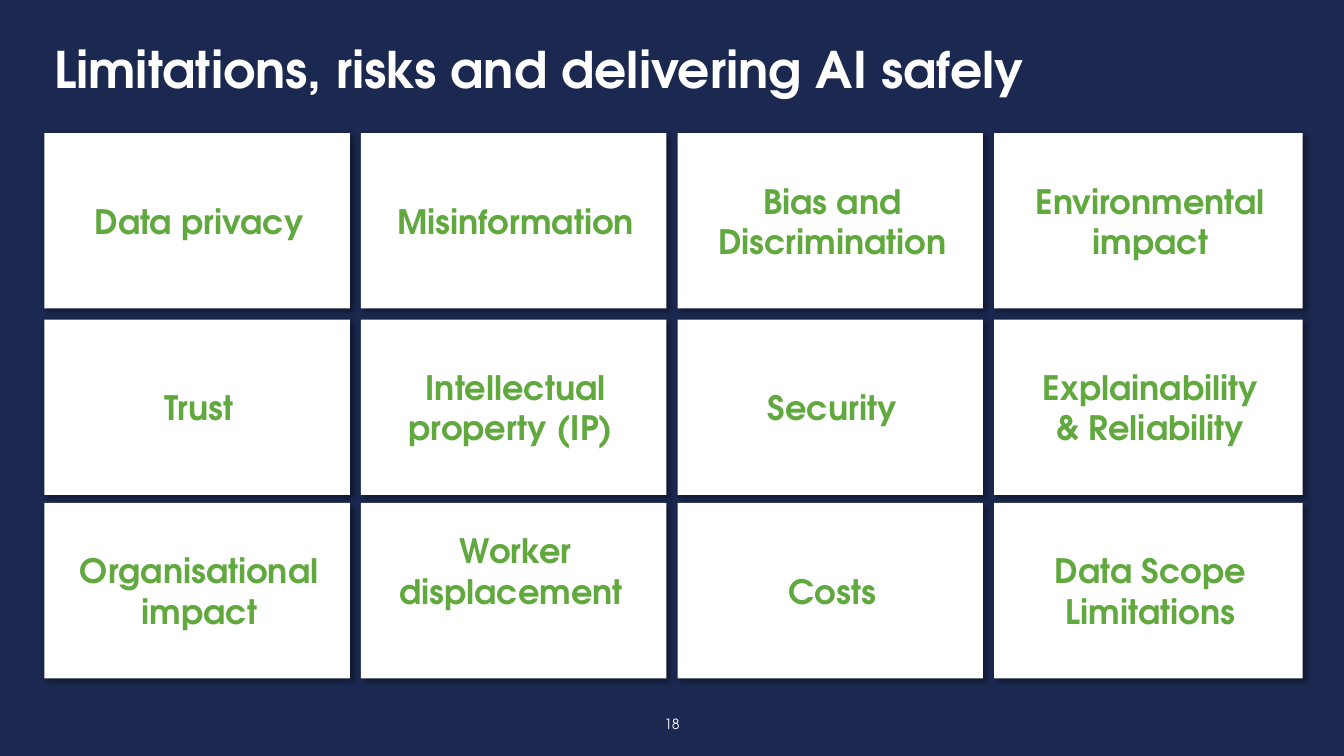
from lxml import etree
from pptx import Presentation
from pptx.dml.color import RGBColor
from pptx.enum.shapes import MSO_SHAPE as Preset
from pptx.enum.text import MSO_ANCHOR as Anchor, PP_ALIGN as Align
from pptx.oxml import parse_xml
from pptx.oxml.ns import nsdecls, qn
from pptx.util import Inches, Pt

NAVY, GREEN, WHITE = "1B284F", "61A83F", "FFFFFF"
LINE_HEIGHT = 0.4

RISKS = [
    ["Data privacy", "Misinformation", "Bias and Discrimination", "Environmental impact"],
    ["Trust", "Intellectual property (IP) ", "Security", "Explainability\n& Reliability"],
    ["Organisational impact", "Worker displacement ", "Costs", "Data Scope Limitations"],
]
COLUMNS = [(0.44, 3.03), (3.58, 3.03), (6.72, 3.03), (9.86, 3.06)]
ROW_TOPS = [1.32, 3.17, 4.99]
CARD_HEIGHT = 1.74
RAISED_CARD = "Worker displacement "


def color(hex_text):
    return RGBColor.from_string(hex_text)


def write(shape, text, *, size, ink, bold=False, align=Align.LEFT, anchor=Anchor.TOP,
          insets=(0.1, 0.05, 0.1, 0.05), spacing=None, font="TeX Gyre Adventor"):
    """Fill a shape with text; each line becomes a paragraph."""
    frame = shape.text_frame
    frame.word_wrap = True
    frame.vertical_anchor = anchor
    (frame.margin_left, frame.margin_top,
     frame.margin_right, frame.margin_bottom) = map(Inches, insets)
    frame.text = text
    for paragraph in frame.paragraphs:
        paragraph.alignment = align
        if spacing:
            paragraph.line_spacing = spacing
        for run in paragraph.runs:
            run.font.name = font
            run.font.size = Pt(size)
            run.font.bold = bold
            run.font.color.rgb = color(ink)


def add_soft_shadow(shape):
    """Cast a translucent black shadow to the lower right."""
    properties = shape._element.spPr
    effects = properties.find(qn("a:effectLst"))
    shadow = parse_xml(
        f'<a:outerShdw {nsdecls("a")} blurRad="{Pt(4)}" dist="{Pt(3)}" dir="2700000" '
        'algn="tl" rotWithShape="0"><a:srgbClr val="000000"/></a:outerShdw>')
    etree.SubElement(shadow[0], qn("a:alpha")).set("val", "40000")
    effects.append(shadow)


class SlideBuilder:
    def __init__(self, presentation):
        self.slide = presentation.slides.add_slide(presentation.slide_layouts[6])

    def background(self, fill):
        self.slide.background.fill.solid()
        self.slide.background.fill.fore_color.rgb = color(fill)

    def label(self, text, left, top, width, height, **text_format):
        box = self.slide.shapes.add_textbox(*map(Inches, (left, top, width, height)))
        write(box, text, ink=WHITE, **text_format)

    def card(self, text, left, top, width, height, bottom_inset=0.08):
        card = self.slide.shapes.add_shape(
            Preset.RECTANGLE, *map(Inches, (left, top, width, height)))
        card.shadow.inherit = False
        card.fill.solid()
        card.fill.fore_color.rgb = color(WHITE)
        card.line.fill.background()
        add_soft_shadow(card)
        write(card, text, size=24, ink=GREEN, bold=True, align=Align.CENTER,
              anchor=Anchor.MIDDLE, insets=(0.12, 0.08, 0.08, bottom_inset))


def main():
    presentation = Presentation()
    presentation.slide_width = Inches(13.33)
    presentation.slide_height = Inches(7.5)

    builder = SlideBuilder(presentation)
    builder.background(NAVY)
    builder.label("Limitations, risks and delivering AI safely", 0.44, 0.4, 12.45, 0.7,
                  size=36, bold=True, spacing=0.9)
    for top, row in zip(ROW_TOPS, RISKS):
        for (left, width), risk in zip(COLUMNS, row):
            lift = LINE_HEIGHT if risk == RAISED_CARD else 0
            builder.card(risk, left, top, width, CARD_HEIGHT, bottom_inset=0.08 + lift)
    builder.label("18", 6.41, 6.98, 0.51, 0.4, size=10,
                  align=Align.CENTER, anchor=Anchor.MIDDLE)

    presentation.save("out.pptx")


if __name__ == "__main__":
    main()
